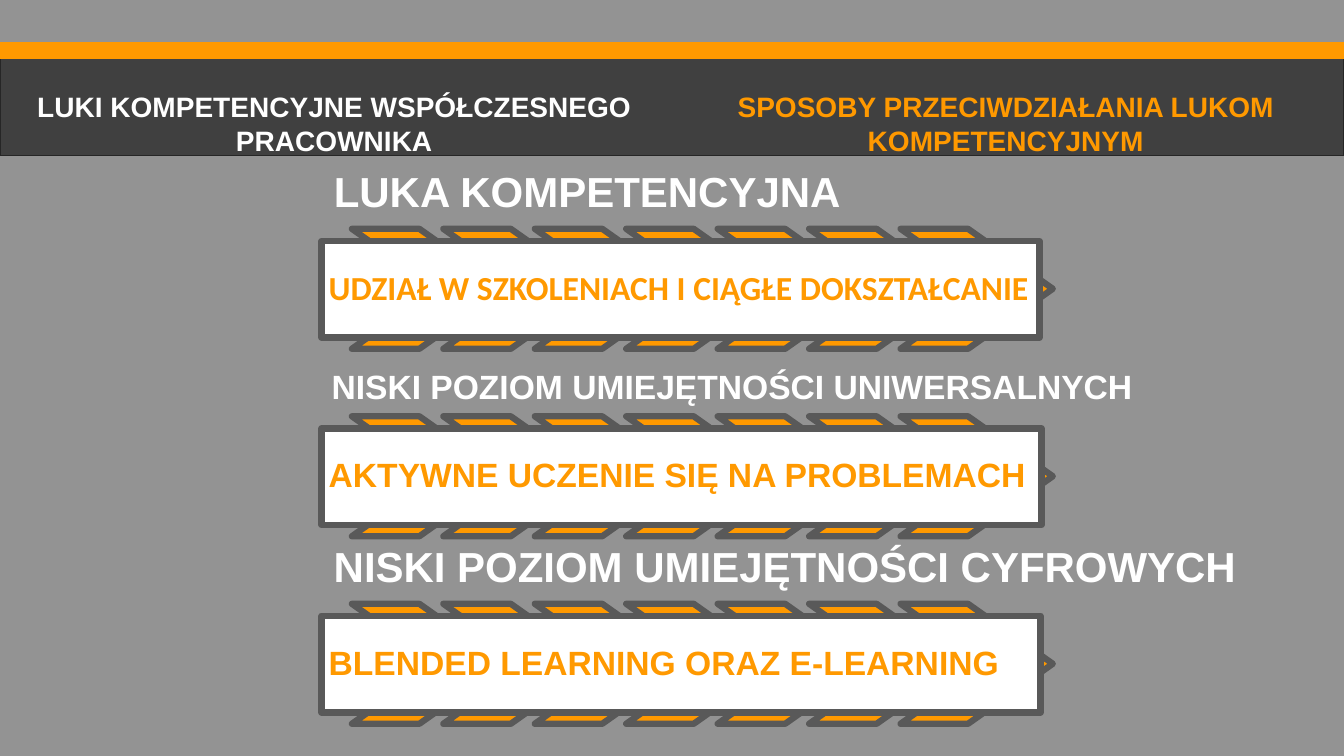
from pptx import Presentation
from pptx.dml.color import RGBColor
from pptx.enum.shapes import MSO_SHAPE as Shape
from pptx.enum.text import MSO_ANCHOR as Anchor, PP_ALIGN as Align
from pptx.util import Inches, Pt

ORANGE, WHITE, GREY = "FF9900", "FFFFFF", "595959"
SLIDE_WIDTH, SLIDE_HEIGHT = 13.33, 7.5
CHEVRON_COUNT, CHEVRON_STEP = 7, 0.907

# gap, its size and inset, its heading width, remedy, its font, remedy width
GAPS = [
    ("LUKA KOMPETENCYJNA", 30, 0.12, 6.45,
     "UDZIAŁ W SZKOLENIACH I CIĄGŁE DOKSZTAŁCANIE", "Calibri", 7.12),
    ("NISKI POZIOM UMIEJĘTNOŚCI UNIWERSALNYCH", 24, 0.1, 9.83,
     "AKTYWNE UCZENIE SIĘ NA PROBLEMACH", "Arial", 7.14),
    ("NISKI POZIOM UMIEJĘTNOŚCI CYFROWYCH", 30, 0.12, 9.83,
     "BLENDED LEARNING ORAZ E-LEARNING", "Arial", 7.13),
]


def rgb(hex_string):
    return RGBColor.from_string(hex_string)


def add_block(slide, kind, box, fill, line, line_width):
    block = slide.shapes.add_shape(kind, *map(Inches, box))
    block.shadow.inherit = False
    block.fill.solid()
    block.fill.fore_color.rgb = rgb(fill)
    block.line.color.rgb = rgb(line)
    block.line.width = Pt(line_width)
    return block


def write(holder, text, size, color, font="Arial", anchor=Anchor.TOP,
          align=Align.LEFT, insets=(0.1, 0.05), spacing=1.0):
    """Fill a shape or text box with one bold paragraph."""
    frame = holder.text_frame
    frame.word_wrap = True
    frame.vertical_anchor = anchor
    frame.margin_left = frame.margin_right = Inches(insets[0])
    frame.margin_top = frame.margin_bottom = Inches(insets[1])
    paragraph = frame.paragraphs[0]
    paragraph.alignment = align
    paragraph.line_spacing = spacing
    run = paragraph.add_run()
    run.text = text
    run.font.size = Pt(size)
    run.font.name = font
    run.font.bold = True
    run.font.color.rgb = rgb(color)


def add_header(slide, left, top, width):
    add_block(slide, Shape.RECTANGLE, (left, top, width, 1.12),
              "404040", "262626", 1)
    add_block(slide, Shape.RECTANGLE, (left, top, width, 0.16),
              ORANGE, ORANGE, 1)
    for text, color, offset, title_width in (
            ("LUKI KOMPETENCYJNE WSPÓŁCZESNEGO PRACOWNIKA", WHITE, 0, 6.63),
            ("SPOSOBY PRZECIWDZIAŁANIA LUKOM KOMPETENCYJNYM", ORANGE, 6.79, 6.37)):
        title = slide.shapes.add_textbox(
            Inches(left + offset), Inches(top + 0.42),
            Inches(title_width), Inches(0.77))
        write(title, text, 20, color, align=Align.CENTER)


def add_gap(slide, left, top, gap, gap_size, inset, gap_width,
            remedy, remedy_font, remedy_width):
    """Place a gap heading above its remedy on a row of chevrons."""
    heading = slide.shapes.add_textbox(
        Inches(left), Inches(top), Inches(gap_width), Inches(0.59))
    write(heading, gap, gap_size, WHITE, anchor=Anchor.BOTTOM,
          insets=(inset, inset), spacing=0.9)
    for index in range(CHEVRON_COUNT):
        chevron = add_block(
            slide, Shape.CHEVRON,
            (left + 0.3 + index * CHEVRON_STEP, top + 0.59, 1.51, 1.19),
            ORANGE, GREY, 4.5)
        chevron.adjustments[0] = 0.706
    panel = add_block(slide, Shape.RECTANGLE,
                      (left, top + 0.71, remedy_width, 0.96), WHITE, GREY, 4.5)
    write(panel, remedy, 24, ORANGE, font=remedy_font, anchor=Anchor.MIDDLE,
          insets=(0.07, 0.07), spacing=0.9)


def main():
    deck = Presentation()
    deck.slide_width = Inches(SLIDE_WIDTH)
    deck.slide_height = Inches(SLIDE_HEIGHT)
    slide = deck.slides.add_slide(deck.slide_layouts[6])
    slide.background.fill.solid()
    slide.background.fill.fore_color.rgb = rgb("939393")
    add_header(slide, 0, 0.42, SLIDE_WIDTH)
    for row, gap in enumerate(GAPS):
        add_gap(slide, 3.19, 1.68 + row * 1.86, *gap)
    deck.save("out.pptx")


if __name__ == "__main__":
    main()
